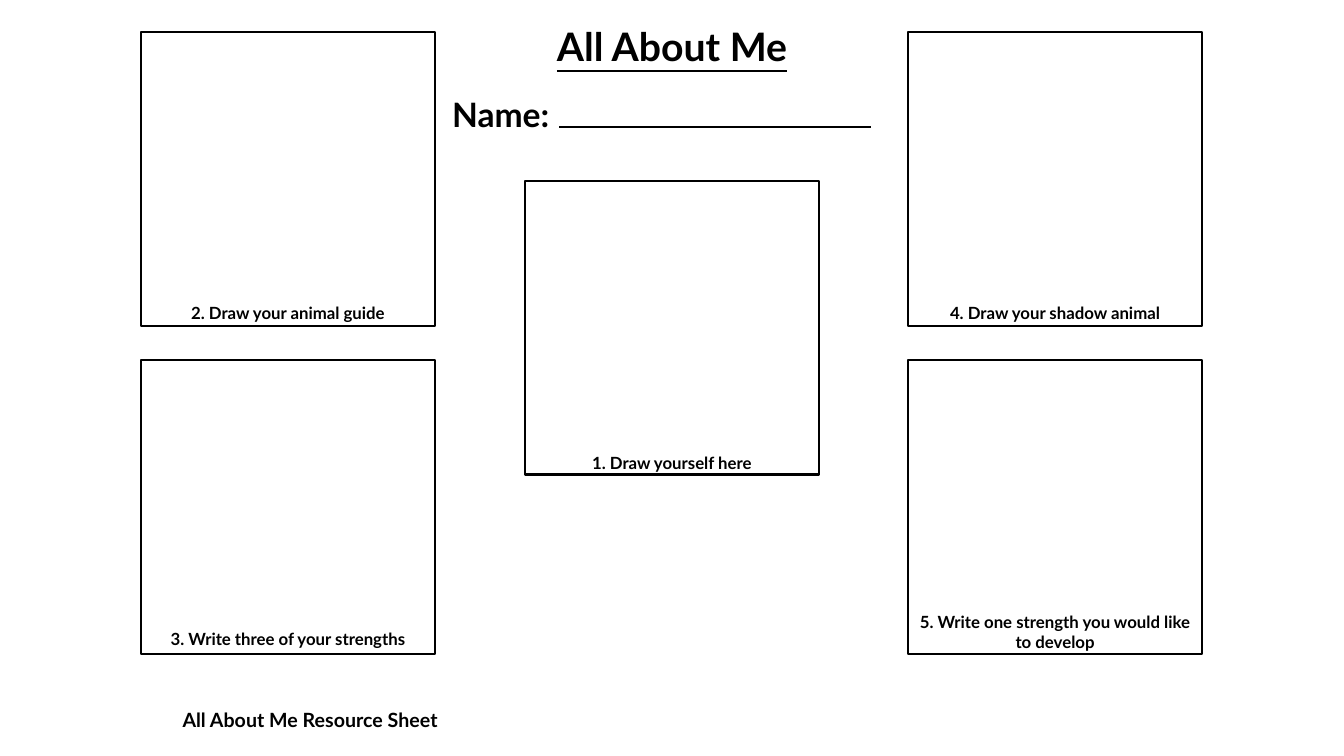
import pptx
import pptx.util
import pptx.dml.color
import pptx.enum.shapes
import pptx.enum.text
import lxml.etree

Pt = pptx.util.Pt
COLORS = {"ink": "000000", "paper": "FFFFFF"}
FACE = "Lato"
SIDE = 210  # width of every frame and label
LEFT, MID, RIGHT = 100.8, 375, 648.7
UPPER, CENTER, LOWER = 23, 129, 257

# Content: caption, frame left, frame top, caption top, caption height
FRAMES = [
    ("1. Draw yourself here", MID, CENTER, 319.7, 21.6),
    ("2. Draw your animal guide", LEFT, UPPER, 212.4, 21.6),
    ("3. Write three of your strengths", LEFT, LOWER, 445.7, 21.6),
    ("4. Draw your shadow animal", RIGHT, UPPER, 212.4, 21.6),
    ("5. Write one strength you would like to develop", RIGHT, LOWER, 433.4, 36),
]
TITLE = ("All About Me", MID, 12.2, 41, 28)
# Text, left, top, height, font size
LABELS = [
    ("Name: ", 255.6, 63.4, 36, 24),
    ("All About Me Resource Sheet", 116.6, 501.8, 24.5, 14),
]
RULE = (399.6, 622, 90.7)  # start, end, height on the page


def tint(name):
    return pptx.dml.color.RGBColor.from_string(COLORS[name])


def write(box, text, left, top, high, size):
    box.left, box.top, box.width, box.height = map(Pt, (left, top, SIDE, high))
    frame = box.text_frame
    frame.word_wrap = True
    frame.auto_size = pptx.enum.text.MSO_AUTO_SIZE.SHAPE_TO_FIT_TEXT
    frame.vertical_anchor = pptx.enum.text.MSO_ANCHOR.TOP
    frame.text = text
    para = frame.paragraphs[0]
    para.alignment = pptx.enum.text.PP_ALIGN.CENTER
    font = para.font
    font.name, font.size, font.bold = FACE, Pt(size), True
    font.color.rgb = tint("ink")
    return font


deck = pptx.Presentation()
deck.slide_width, deck.slide_height = Pt(960), Pt(540)
slide = deck.slides.add_slide(deck.slide_layouts[5])
shapes = slide.shapes

# Title
write(shapes.title, *TITLE).underline = True

# Drawing frames
for text, left, top, *rest in FRAMES:
    box = shapes.add_shape(pptx.enum.shapes.MSO_SHAPE.RECTANGLE,
                           Pt(left), Pt(top), Pt(SIDE), Pt(SIDE))
    box.shadow.inherit = False
    box.fill.solid()
    box.fill.fore_color.rgb = tint("paper")
    box.line.color.rgb = tint("ink")
    box.line.width = Pt(1.5)

# Captions, name label and footer
captions = [(text, left, top, high, 12) for text, left, _, top, high in FRAMES]
for label in captions + LABELS:
    write(shapes.add_textbox(0, 0, 0, 0), *label)

# Line for the name
start, end, level = map(Pt, RULE)
rule = shapes.add_connector(pptx.enum.shapes.MSO_CONNECTOR.STRAIGHT,
                            start, level, end, level)
rule.line.color.rgb = tint("ink")
rule.line.width = Pt(1)
lxml.etree.SubElement(rule._element.spPr, pptx.oxml.ns.qn("a:effectLst"))

deck.save("out.pptx")
